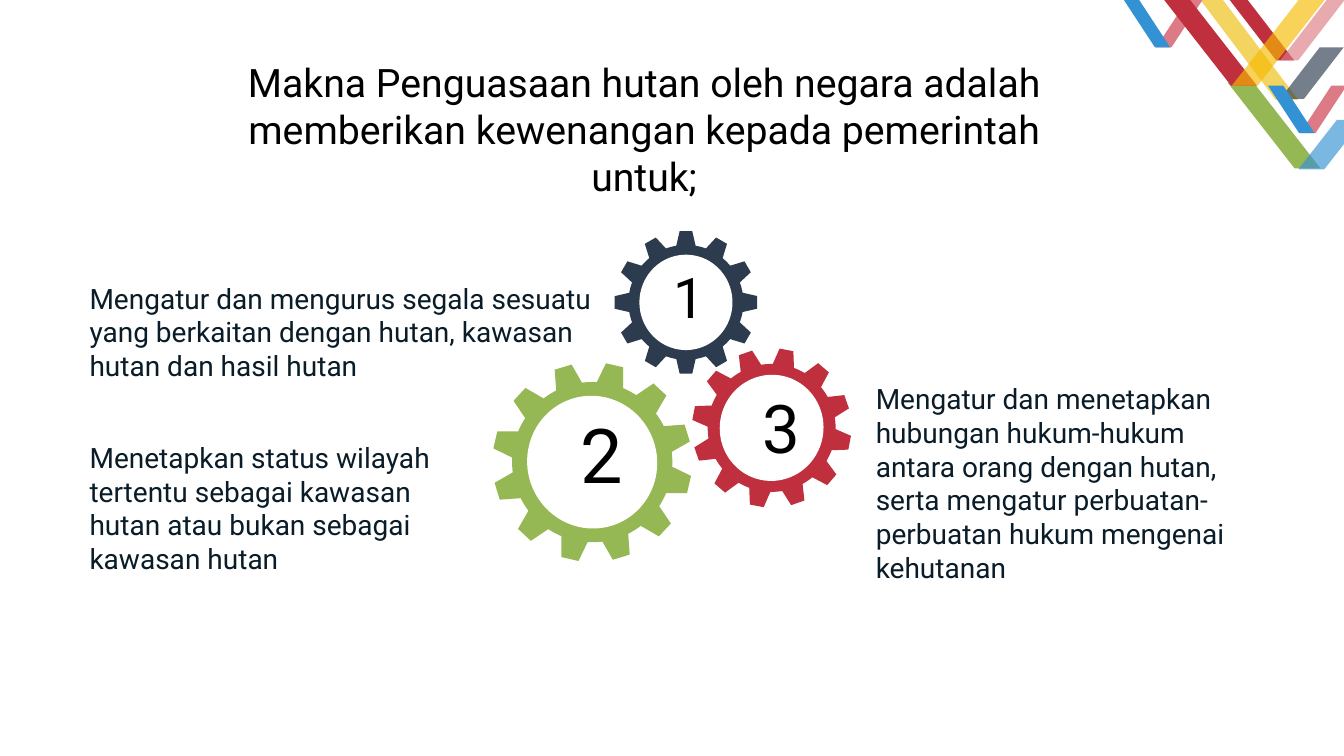
import math

from lxml import etree
from pptx import Presentation
from pptx.dml.color import RGBColor
from pptx.enum.shapes import MSO_SHAPE
from pptx.enum.text import MSO_ANCHOR, MSO_AUTO_SIZE, PP_ALIGN
from pptx.oxml.ns import qn
from pptx.util import Inches, Pt

CELL = Inches(0.1)
COLUMNS, ROWS = 133.33, 75
TITLE_ONLY_LAYOUT = 5
TEETH = 12

PARALLELOGRAM = MSO_SHAPE.PARALLELOGRAM
TRAPEZOID = MSO_SHAPE.TRAPEZOID
DISC = MSO_SHAPE.FLOWCHART_CONNECTOR
LEFT, CENTER = PP_ALIGN.LEFT, PP_ALIGN.CENTER

BLACK = RGBColor(0x00, 0x00, 0x00)
WHITE = RGBColor(0xFF, 0xFF, 0xFF)
INK = RGBColor(0x0A, 0x1C, 0x28)
NAVY = RGBColor(0x2C, 0x3B, 0x4E)
RED = RGBColor(0xC0, 0x2F, 0x3D)
PINK = RGBColor(0xDC, 0x7B, 0x85)
GREEN = RGBColor(0x95, 0xB7, 0x54)
BLUE = RGBColor(0x33, 0x92, 0xD3)
YELLOW = RGBColor(0xF4, 0xD4, 0x61)
AMBER = RGBColor(0xF7, 0xBA, 0x00)

FRAME_FORMAT = {
    "word_wrap": True,
    "auto_size": MSO_AUTO_SIZE.NONE,
    "vertical_anchor": MSO_ANCHOR.TOP,
}

TITLE = ("Makna Penguasaan hutan oleh negara adalah memberikan "
         "kewenangan kepada pemerintah untuk;")

MEANINGS = [
    ("Mengatur dan mengurus segala sesuatu yang berkaitan dengan hutan, "
     "kawasan hutan dan hasil hutan", (7.9, 27.4, 52.3, 11.1)),
    ("Mengatur dan menetapkan hubungan hukum-hukum antara orang dengan hutan, "
     "serta mengatur perbuatan-perbuatan hukum mengenai kehutanan",
     (85.9, 37.4, 36.6, 17.8)),
    ("Menetapkan status wilayah tertentu sebagai kawasan hutan atau bukan "
     "sebagai kawasan hutan", (7.9, 43.2, 37.5, 14.5)),
]

RIBBONS = [
    ((122, 0, 6.4, 6), 0.77, True, RED, 100),
    ((119.1, 0, 9.7, 9.9), 0.77, True, YELLOW, 100),
    ((121.8, 8.2, 9.2, 8.5), 0.78, True, GREEN, 100),
    ((114.7, 0, 4.6, 4.7), 0.67, False, PINK, 100),
    ((115.5, 0, 9.2, 8.5), 0.78, True, RED, 100),
    ((122.2, 0, 9.2, 8.5), 0.78, False, AMBER, 65),
    ((111.5, 0, 4.6, 4.7), 0.67, True, BLUE, 100),
    ((128.8, 11.9, 6.4, 4.9), 0.78, False, BLUE, 65),
    ((127, 4.7, 6.3, 5.1), 0.77, False, NAVY, 65),
    ((127, 0, 6.4, 6), 0.77, False, PINK, 65),
    ((129, 8.5, 4.6, 4.7), 0.67, False, PINK, 100),
    ((125.8, 8.5, 4.6, 4.7), 0.67, True, BLUE, 100),
]

GEARS = [
    ("1", (68.05, 30), 11.4, 0, NAVY, 40, (65.8, 25.6, 4.2, 7.7)),
    ("2", (58.75, 45.85), 15.9, -17, GREEN, 54, (56.6, 40, 4.2, 10.1)),
    ("3", (76.55, 42.45), 12.7, 10.8, RED, 48, (74.7, 37.8, 4.2, 9.1)),
]


def on_grid(cells):
    return [round(value * CELL) for value in cells]


def apply_format(target, values):
    for name, value in values.items():
        setattr(target, name, value)


def write_text(shape, text, size, color, alignment):
    frame = shape.text_frame
    apply_format(frame, FRAME_FORMAT)
    paragraph = frame.paragraphs[0]
    paragraph.alignment = alignment
    run = paragraph.add_run()
    run.text = text
    apply_format(run.font, {"name": "Roboto", "size": Pt(size)})
    run.font.color.rgb = color


def add_title(slide):
    title = slide.shapes.title
    names = ("left", "top", "width", "height")
    apply_format(title, dict(zip(names, on_grid((19, 5.3, 89.8, 10.4)))))
    write_text(title, TITLE, 28, BLACK, CENTER)


def add_label(shapes, text, cells, size, color, alignment):
    box = shapes.add_textbox(*on_grid(cells))
    write_text(box, text, size, color, alignment)


def add_filled(shapes, kind, cells, color):
    shape = shapes.add_shape(kind, *on_grid(cells))
    shape.shadow.inherit = False
    shape.fill.solid()
    shape.fill.fore_color.rgb = color
    shape.line.fill.background()
    return shape


def add_centred(shapes, kind, center, width, height, rotation, color):
    x, y = center
    cells = (x - width / 2, y - height / 2, width, height)
    add_filled(shapes, kind, cells, color).rotation = rotation


def add_ribbon(shapes, cells, slant, flipped, color, opacity):
    ribbon = add_filled(shapes, PARALLELOGRAM, cells, color)
    ribbon.adjustments[0] = slant
    properties = ribbon._element.spPr
    if flipped:
        properties.find(qn("a:xfrm")).set("flipH", "1")
    if opacity < 100:
        fill_color = properties.find(qn("a:solidFill"))[0]
        alpha = etree.SubElement(fill_color, qn("a:alpha"))
        alpha.set("val", str(opacity * 1000))


def add_gear(shapes, number, center, diameter, turn, color, size, number_cells):
    x, y = center
    radius = diameter / 2
    for tooth in range(TEETH):
        angle = turn + tooth * 360 / TEETH
        direction = math.radians(angle)
        tooth_center = (x + radius * math.sin(direction),
                        y - radius * math.cos(direction))
        add_centred(shapes, TRAPEZOID, tooth_center,
                    diameter * 0.22, diameter * 0.24, angle, color)
    add_centred(shapes, DISC, center, diameter, diameter, turn, color)
    add_centred(shapes, DISC, center, diameter * 0.81, diameter * 0.83, turn, WHITE)
    add_label(shapes, number, number_cells, size, BLACK, CENTER)


def main():
    presentation = Presentation()
    presentation.slide_width = round(COLUMNS * CELL)
    presentation.slide_height = ROWS * CELL
    layout = presentation.slide_layouts[TITLE_ONLY_LAYOUT]
    slide = presentation.slides.add_slide(layout)
    add_title(slide)
    ribbons = slide.shapes.add_group_shape().shapes
    for ribbon in RIBBONS:
        add_ribbon(ribbons, *ribbon)
    for text, cells in MEANINGS:
        add_label(slide.shapes, text, cells, 20, INK, LEFT)
    for gear in GEARS:
        add_gear(slide.shapes.add_group_shape().shapes, *gear)
    presentation.save("out.pptx")


if __name__ == "__main__":
    main()
